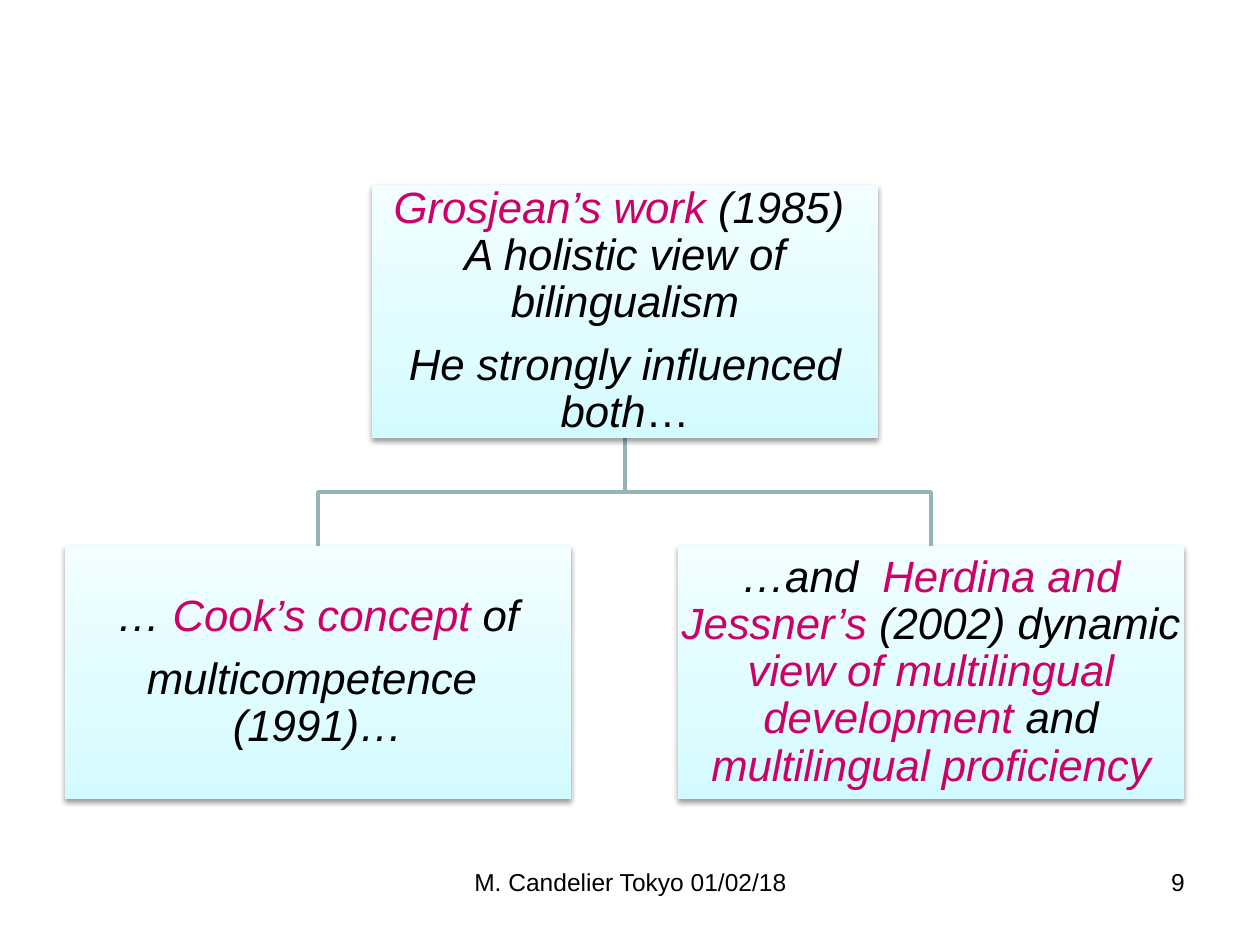
from copy import deepcopy

from lxml import etree
from pptx import Presentation
from pptx import util as u
from pptx.dml.color import RGBColor
from pptx.enum import shapes, text
from pptx.oxml.ns import qn

PX = 914400 / 126
FONT = "Arial"
COLORS = {
    "text": "000000",
    "accent": "CC0066",
    "line": "96B3B6",
    "shadow": "000000",
}
GRADIENT = [(0, "D3FBFF"), (0.35, "DFFCFF"), (1, "F2FEFF")]
BOX_W, BOX_H = 506, 253
ROOT = (372, 185)
CHILDREN = [(65, 546), (678, 546)]

# Each paragraph is a list of (text, colour name, italic)
ROOT_TEXT = [
    [("Grosjean’s work ", "accent", True),
     ("(1985) \nA holistic view of bilingualism", "text", True)],
    [("He strongly influenced both", "text", True), ("…", "text", False)],
]
CHILD_TEXTS = [
    [
        [("… ", "text", True), ("Cook’s concept ", "accent", True),
         ("of", "text", True)],
        [("multicompetence \n(1991)…", "text", True)],
    ],
    [
        [("…and  ", "text", True),
         ("Herdina and Jessner’s ", "accent", True),
         ("(2002) dynamic ", "text", True),
         ("view of multilingual development ", "accent", True),
         ("and ", "text", True),
         ("multilingual proficiency", "accent", True)],
    ],
]


def px(n):
    return u.Emu(round(n * PX))


def rgb(name):
    return RGBColor.from_string(COLORS[name])


def fill_gradient(sp):
    sp.fill.gradient()
    sp.fill.gradient_angle = 90
    stops = sp._element.spPr.find(".//" + qn("a:gsLst"))
    stops.insert(1, deepcopy(stops[0]))
    for stop, (position, color) in zip(sp.fill.gradient_stops, GRADIENT):
        stop.position = position
        stop.color.rgb = RGBColor.from_string(color)


def add_shadow(sp):
    sp.shadow.inherit = False
    effects = sp._element.spPr.find(qn("a:effectLst"))
    shadow = etree.SubElement(
        effects, qn("a:outerShdw"), blurRad=str(u.Pt(3.1)),
        dist=str(u.Pt(1.6)), dir="5400000", rotWithShape="0")
    color = etree.SubElement(shadow, qn("a:srgbClr"), val=COLORS["shadow"])
    etree.SubElement(color, qn("a:alpha"), val="38000")


def add_runs(p, runs):
    for content, color, italic in runs:
        for i, line in enumerate(content.split("\n")):
            if i:
                p.add_line_break()
            r = p.add_run()
            r.text = line
            r.font.size = u.Pt(25)
            r.font.name = FONT
            r.font.italic = italic
            r.font.color.rgb = rgb(color)


def add_box(slide, left, top, paragraphs):
    sp = slide.shapes.add_shape(shapes.MSO_SHAPE.RECTANGLE, px(left), px(top),
                                px(BOX_W), px(BOX_H))
    fill_gradient(sp)
    sp.line.fill.background()
    add_shadow(sp)
    tf = sp.text_frame
    tf.word_wrap = True
    tf.vertical_anchor = text.MSO_ANCHOR.MIDDLE
    tf.margin_left = tf.margin_right = px(2)
    tf.margin_top = tf.margin_bottom = px(2)
    for i, runs in enumerate(paragraphs):
        p = tf.add_paragraph() if i else tf.paragraphs[0]
        p.alignment = text.PP_ALIGN.CENTER
        p.line_spacing = 0.9
        p.space_after = u.Pt(9)
        add_runs(p, runs)


def add_branch(slide, parent, child):
    x1, y1 = parent[0] + BOX_W // 2, parent[1] + BOX_H
    x2, y2 = child[0] + BOX_W // 2, child[1]
    middle = (y1 + y2) // 2
    builder = slide.shapes.build_freeform(x1, y1, scale=PX)
    builder.add_line_segments([(x1, middle), (x2, middle), (x2, y2)],
                              close=False)
    sp = builder.convert_to_shape()
    sp.fill.background()
    sp.line.color.rgb = rgb("line")
    sp.line.width = u.Pt(2)
    sp.shadow.inherit = False


def add_footer(slide, left, width, content, align):
    tf = slide.shapes.add_textbox(px(left), px(861), px(width),
                                  px(66)).text_frame
    tf.word_wrap = True
    p = tf.paragraphs[0]
    p.text = content
    p.alignment = align
    p.font.size = u.Pt(14)
    p.font.name = FONT
    p.font.color.rgb = rgb("text")


def main():
    prs = Presentation()
    prs.slide_width, prs.slide_height = px(1260), px(945)
    slide = prs.slides.add_slide(prs.slide_layouts[6])

    # Tree: branches behind the boxes
    for child in CHILDREN:
        add_branch(slide, ROOT, child)
    add_box(slide, *ROOT, ROOT_TEXT)
    for child, paragraphs in zip(CHILDREN, CHILD_TEXTS):
        add_box(slide, *child, paragraphs)

    # Footer and slide number
    add_footer(slide, 431, 399, "M. Candelier Tokyo 01/02/18",
               text.PP_ALIGN.CENTER)
    add_footer(slide, 903, 294, "9", text.PP_ALIGN.RIGHT)

    prs.save("out.pptx")


if __name__ == "__main__":
    main()
